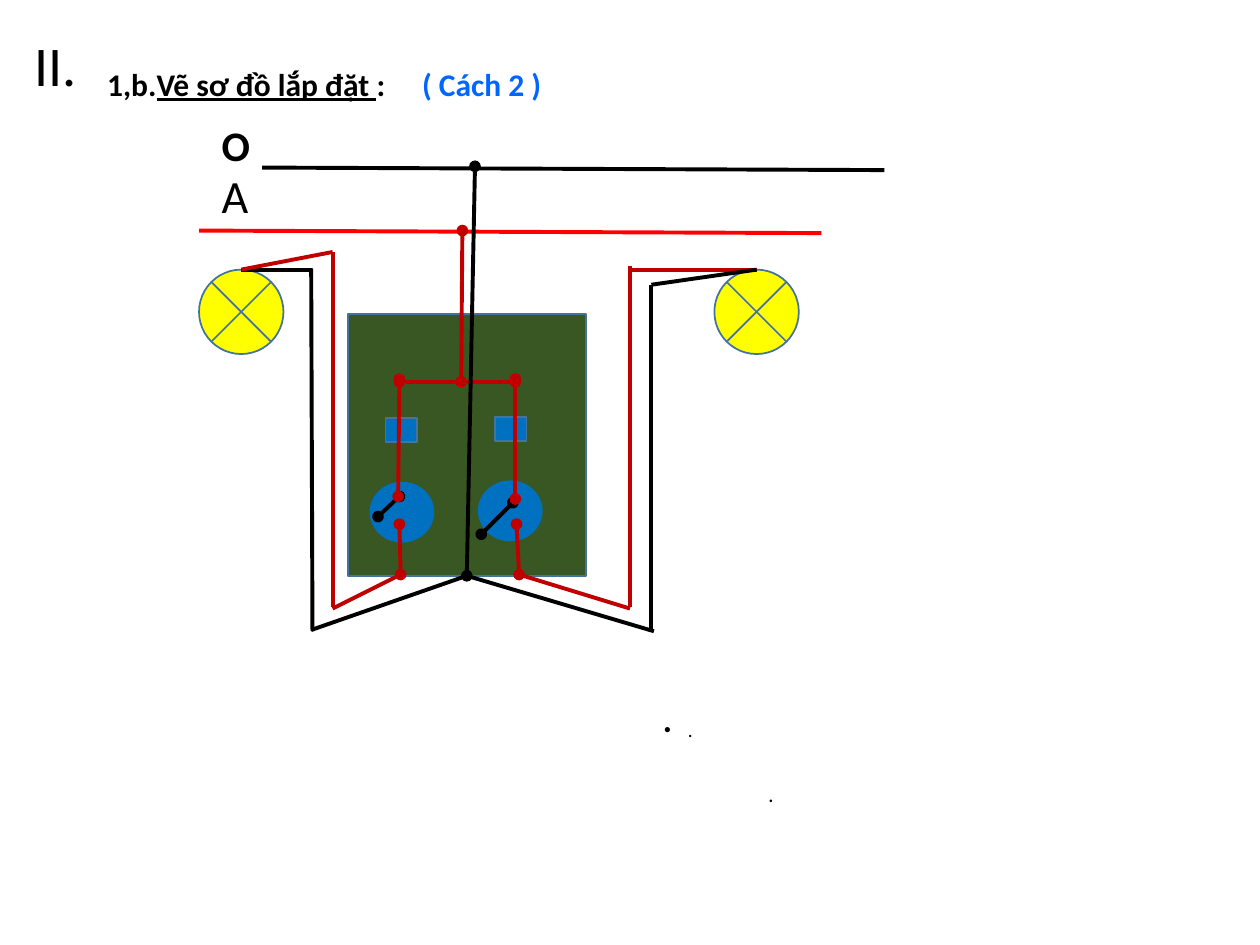
from lxml.etree import SubElement
from pptx import Presentation
from pptx.dml.color import RGBColor
from pptx.enum.shapes import MSO_CONNECTOR as CXN, MSO_SHAPE as SHP
from pptx.enum.text import MSO_ANCHOR as ANC, MSO_AUTO_SIZE as AUTO, PP_ALIGN as AL
from pptx.oxml.ns import qn
from pptx.util import Inches, Pt

BLACK = RGBColor(0x00, 0x00, 0x00)
RED = RGBColor(0xFF, 0x00, 0x00)
DARK_RED = RGBColor(0xC0, 0x00, 0x00)
YELLOW = RGBColor(0xFF, 0xFF, 0x00)
GREEN = RGBColor(0x38, 0x57, 0x23)
BLUE = RGBColor(0x00, 0x70, 0xC0)
TITLE_BLUE = RGBColor(0x00, 0x66, 0xFF)
OUTLINE = RGBColor(0x43, 0x73, 0x9E)
FONT = "Calibri"


def add_run(p, text, size, color=BLACK, bold=False, underline=False):
    """Add one formatted run to a paragraph."""
    r = p.add_run()
    r.text = text
    formats = {"name": FONT, "size": Pt(size), "bold": bold, "underline": underline}
    for name, value in formats.items():
        setattr(r.font, name, value)
    r.font.color.rgb = color


def format_paragraph(p, spacing, margin=0, indent=0, bullet=None, tab=None, before=0):
    """Set spacing, indents, bullet and tab stop of a paragraph."""
    pPr = p._p.get_or_add_pPr()
    pPr.set("marL", str(Inches(margin)))
    pPr.set("indent", str(Inches(indent)))
    if bullet:
        SubElement(pPr, qn("a:buChar")).set("char", bullet)
    else:
        SubElement(pPr, qn("a:buNone"))
    if tab:
        stop = SubElement(SubElement(pPr, qn("a:tabLst")), qn("a:tab"))
        stop.set("pos", str(Inches(tab)))
        stop.set("algn", "l")
    formats = {"alignment": AL.LEFT, "line_spacing": spacing, "space_before": Pt(before)}
    for name, value in formats.items():
        setattr(p, name, value)


def fill_placeholder(sp, box, paragraphs, anchor=ANC.TOP, spacing=0.9, **layout):
    """Place a placeholder and write its paragraphs, each a list of runs."""
    for name, value in zip(("left", "top", "width", "height"), box):
        setattr(sp, name, Inches(value))
    tf = sp.text_frame
    formats = {"word_wrap": True, "auto_size": AUTO.NONE, "vertical_anchor": anchor}
    for name, value in formats.items():
        setattr(tf, name, value)
    for i, runs in enumerate(paragraphs):
        p = tf.add_paragraph() if i else tf.paragraphs[0]
        format_paragraph(p, spacing, before=7.5 if i else 0, **layout)
        for run in runs:
            add_run(p, *run)


def add_part(s, kind, box, fill, line=OUTLINE):
    """Add a filled part of the circuit."""
    sp = s.shapes.add_shape(kind, *map(Inches, box))
    sp.shadow.inherit = False
    sp.fill.solid()
    sp.fill.fore_color.rgb = fill
    sp.line.color.rgb = line
    sp.line.width = Pt(1)
    return sp


def add_wire(s, color, start, end, dots=False, begin_at=None, end_at=None):
    """Add a wire, with optional end dots and joined (shape, site) ends."""
    c = s.shapes.add_connector(CXN.STRAIGHT, *map(Inches, start + end))
    if begin_at:
        c.begin_connect(*begin_at)
    if end_at:
        c.end_connect(*end_at)
    c.line.color.rgb = color
    c.line.width = Pt(2.25)
    if dots:
        ln = c.line._get_or_add_ln()
        for tag in ("a:headEnd", "a:tailEnd"):
            SubElement(ln, qn(tag)).set("type", "oval")
    SubElement(c._element.spPr, qn("a:effectLst"))


def add_texts(s):
    """Fill the title and the four text placeholders."""
    title, heading, labels, note, item = s.placeholders
    fill_placeholder(title, (0.17, 0.25, 0.67, 0.58), [[("II.", 32)]], ANC.MIDDLE)
    fill_placeholder(heading, (0.75, 0.17, 6.08, 0.7), [[
        ("1,b.", 18, BLACK, True),
        ("Vẽ sơ đồ lắp đặt ", 18, BLACK, True, True),
        (":\t", 18, BLACK, True),
        ("( Cách 2 )", 18, TITLE_BLUE, True),
    ]], ANC.BOTTOM, tab=2.44)
    fill_placeholder(labels, (1.61, 1.01, 0.58, 1.17),
                     [[("O", 24, BLACK, True)], [("A", 26.4)]], spacing=0.7, margin=0.05)
    fill_placeholder(note, (6, 5.75, 3.66, 0.7), [[(".", 10, BLACK, True)]], ANC.BOTTOM)
    fill_placeholder(item, (5.17, 5.67, 3.66, 0.58), [[(".", 11)]],
                     margin=0.19, indent=-0.19, bullet="•")


def add_parts(s):
    """Add lamps, board, fuses and switches; return the lamps and the board."""
    lamps = [add_part(s, SHP.FLOWCHART_SUMMING_JUNCTION, (x, 2.14, 0.67, 0.67), YELLOW)
             for x in (1.58, 5.67)]
    board = add_part(s, SHP.RECTANGLE, (2.76, 2.49, 1.89, 2.08), GREEN)
    for x, y in ((3.06, 3.32), (3.93, 3.31)):
        add_part(s, SHP.RECTANGLE, (x, y, 0.25, 0.19), BLUE)
    for x, y in ((3.8, 3.82), (2.94, 3.83)):
        add_part(s, SHP.OVAL, (x, y, 0.5, 0.47), BLUE, BLUE)
    return lamps, board


def add_wiring(s, lamps, board):
    """Connect the supply, the board and the lamps."""
    left_lamp, right_lamp = [(lamp, 0) for lamp in lamps]
    outlet = (board, 2)
    dotted = [
        (BLACK, (3.17, 3.94), (3, 4.1)),
        (BLACK, (4.07, 3.99), (3.82, 4.24)),
        (DARK_RED, (3.67, 1.83), (3.66, 3.03)),
        (DARK_RED, (3.17, 3.03), (4.09, 3.03)),
        (DARK_RED, (4.09, 3.01), (4.09, 3.96)),
        (DARK_RED, (3.17, 3.01), (3.16, 3.94)),
        (DARK_RED, (3.17, 4.16), (3.18, 4.56)),
        (DARK_RED, (4.1, 4.16), (4.12, 4.56)),
    ]
    plain = [
        (DARK_RED, (2.64, 4.83), (3.18, 4.56)),
        (DARK_RED, (4.12, 4.56), (5, 4.83)),
        (DARK_RED, (2.64, 2), (2.64, 4.82)),
        (DARK_RED, (5, 2.11), (5, 4.82)),
        (BLACK, (2.47, 2.13), (2.48, 5.01)),
        (BLACK, (5.17, 2.26), (5.17, 5)),
    ]
    for wire in dotted:
        add_wire(s, *wire, dots=True)
    for wire in plain:
        add_wire(s, *wire)
    add_wire(s, BLACK, (1.92, 2.14), (2.48, 2.14), begin_at=left_lamp)
    add_wire(s, DARK_RED, (5, 2.14), (6, 2.14), end_at=right_lamp)
    add_wire(s, DARK_RED, (1.92, 2.14), (2.64, 2), begin_at=left_lamp)
    add_wire(s, BLACK, (5.17, 2.26), (6, 2.14), end_at=right_lamp)
    add_wire(s, BLACK, (3.77, 1.32), (3.7, 4.57), dots=True, end_at=outlet)
    add_wire(s, BLACK, (2.47, 5), (3.7, 4.57), end_at=outlet)
    add_wire(s, BLACK, (3.7, 4.57), (5.19, 5.01), begin_at=outlet)


def main():
    """Build the slide and save it."""
    prs = Presentation()
    prs.slide_width, prs.slide_height = Inches(10), Inches(7.5)
    s = prs.slides.add_slide(prs.slide_layouts.get_by_name("Comparison"))
    add_texts(s)
    add_wire(s, RED, (1.58, 1.83), (6.52, 1.85))
    add_wire(s, BLACK, (2.08, 1.33), (7.02, 1.35))
    lamps, board = add_parts(s)
    add_wiring(s, lamps, board)
    prs.save("out.pptx")


if __name__ == "__main__":
    main()
